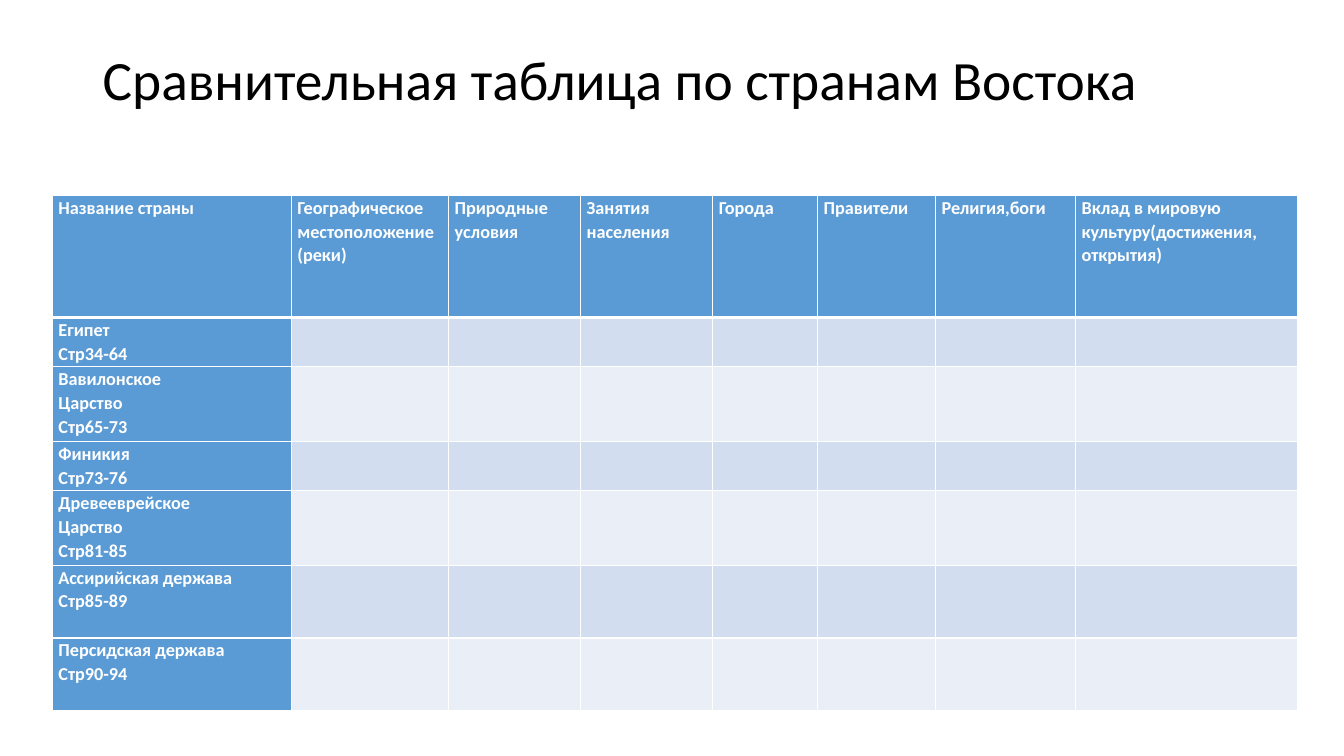
from lxml.etree import SubElement
from pptx import Presentation
from pptx.dml.color import RGBColor
from pptx.enum.text import MSO_ANCHOR
from pptx.oxml.ns import qn
from pptx.util import Inches, Pt

TITLE = "Сравнительная таблица по странам Востока"
HEADERS = [
    ["Название страны"],
    ["Географическое местоположение", "(реки)"],
    ["Природные условия"],
    ["Занятия населения"],
    ["Города"],
    ["Правители"],
    ["Религия,боги"],
    ["Вклад в мировую культуру(достижения, открытия)"],
]
COUNTRIES = [
    ["Египет", "Стр34-64"],
    ["Вавилонское", "Царство", "Стр65-73"],
    ["Финикия", "Стр73-76"],
    ["Древееврейское", "Царство", "Стр81-85"],
    ["Ассирийская держава", "Стр85-89"],
    ["Персидская держава", "Стр90-94"],
]
COLUMN_WIDTHS = [2.37, 1.56, 1.31, 1.31, 1.04, 1.17, 1.39, 2.2]
ROW_HEIGHTS = [1.21, 0.49, 0.74, 0.49, 0.74, 0.72, 0.72]
FONT = "Calibri"
WHITE, BLACK, BLUE = "FFFFFF", "000000", "5B9BD5"
BANDS = ["EAEFF7", "D2DEEF"]


def color(value):
    return RGBColor.from_string(value)


def write_lines(frame, lines, size, text_color, spacing, bold=False):
    for index, line in enumerate(lines):
        paragraph = frame.add_paragraph() if index else frame.paragraphs[0]
        paragraph.line_spacing = spacing
        run = paragraph.add_run()
        run.text = line
        run.font.name = FONT
        run.font.size = Pt(size)
        run.font.bold = bold
        run.font.color.rgb = color(text_color)


def add_border(cell, side, width):
    properties = cell._tc.get_or_add_tcPr()
    line = SubElement(properties, qn(f"a:ln{side}"), w=str(Pt(width)))
    fill = SubElement(line, qn("a:solidFill"))
    SubElement(fill, qn("a:srgbClr"), val=WHITE)


def add_title(slide):
    shape = slide.shapes.add_textbox(Inches(0.92), Inches(0.4), Inches(11.5), Inches(1.45))
    frame = shape.text_frame
    frame.word_wrap = True
    frame.vertical_anchor = MSO_ANCHOR.TOP
    frame.margin_top = Inches(0.12)
    write_lines(frame, [TITLE], 39.6, BLACK, 0.9)


def format_cell(cell, row, column):
    for side in "LRTB":
        beside_header = (row, side) in [(0, "B"), (1, "T")]
        add_border(cell, side, 3 if beside_header else 1)
    is_heading = row == 0 or column == 0
    cell.fill.solid()
    cell.fill.fore_color.rgb = color(BLUE if is_heading else BANDS[row % 2])
    if is_heading:
        cell.margin_left = cell.margin_right = Inches(0.06)
        cell.margin_top = cell.margin_bottom = 0
        lines = HEADERS[column] if row == 0 else COUNTRIES[row - 1]
        write_lines(cell.text_frame, lines, 13, WHITE, 1.07, True)


def add_comparison_table(slide):
    table = slide.shapes.add_table(
        len(ROW_HEIGHTS), len(COLUMN_WIDTHS), Inches(0.52), Inches(1.94),
        Inches(sum(COLUMN_WIDTHS)), Inches(sum(ROW_HEIGHTS)),
    ).table
    table.first_col = True
    for column, width in zip(table.columns, COLUMN_WIDTHS):
        column.width = Inches(width)
    for row, height in zip(table.rows, ROW_HEIGHTS):
        row.height = Inches(height)
    for row in range(len(ROW_HEIGHTS)):
        for column in range(len(COLUMN_WIDTHS)):
            format_cell(table.cell(row, column), row, column)


def main():
    presentation = Presentation()
    presentation.slide_width = Inches(13.33)
    presentation.slide_height = Inches(7.5)
    slide = presentation.slides.add_slide(presentation.slide_layouts[6])
    add_title(slide)
    add_comparison_table(slide)
    presentation.save("out.pptx")


if __name__ == "__main__":
    main()
